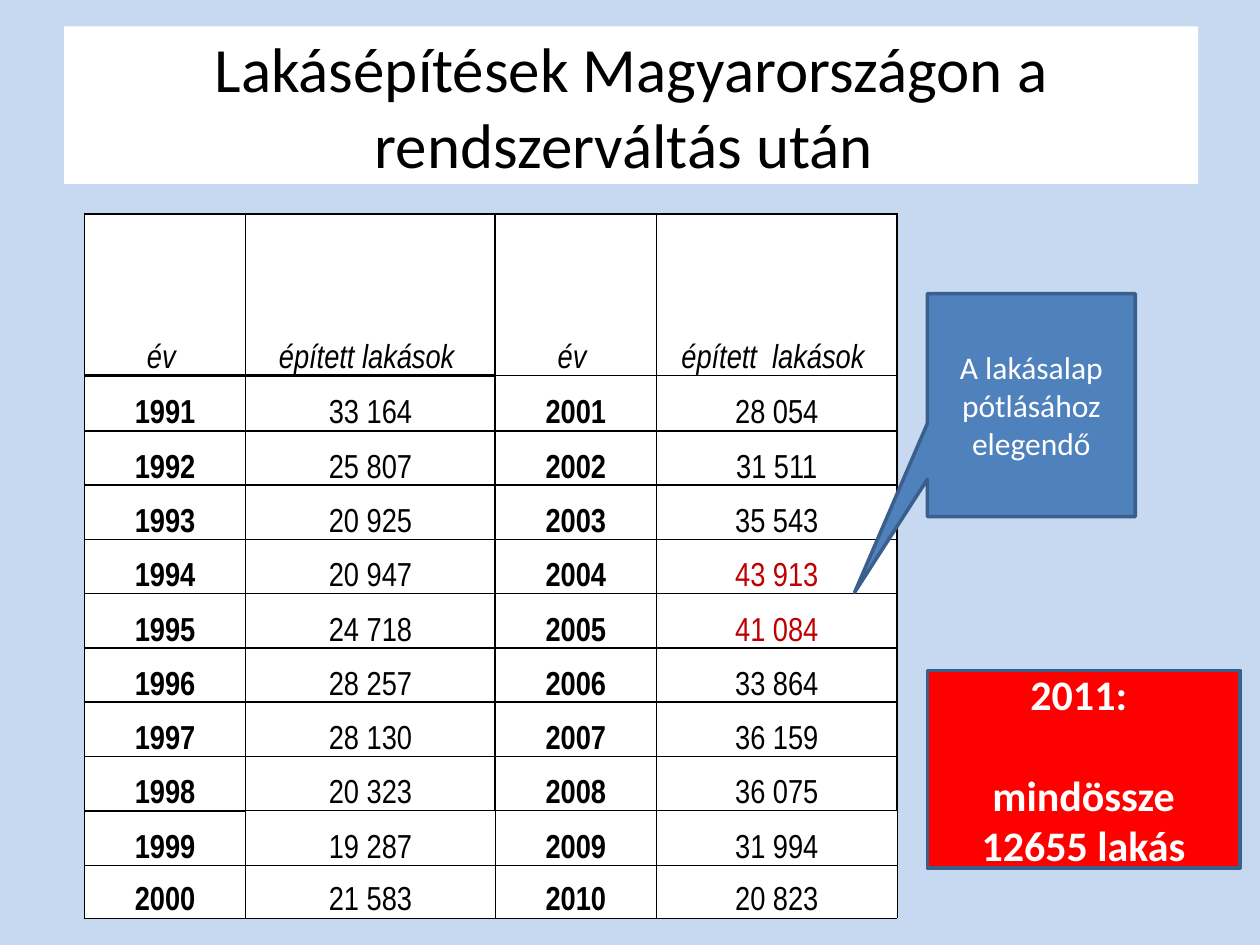
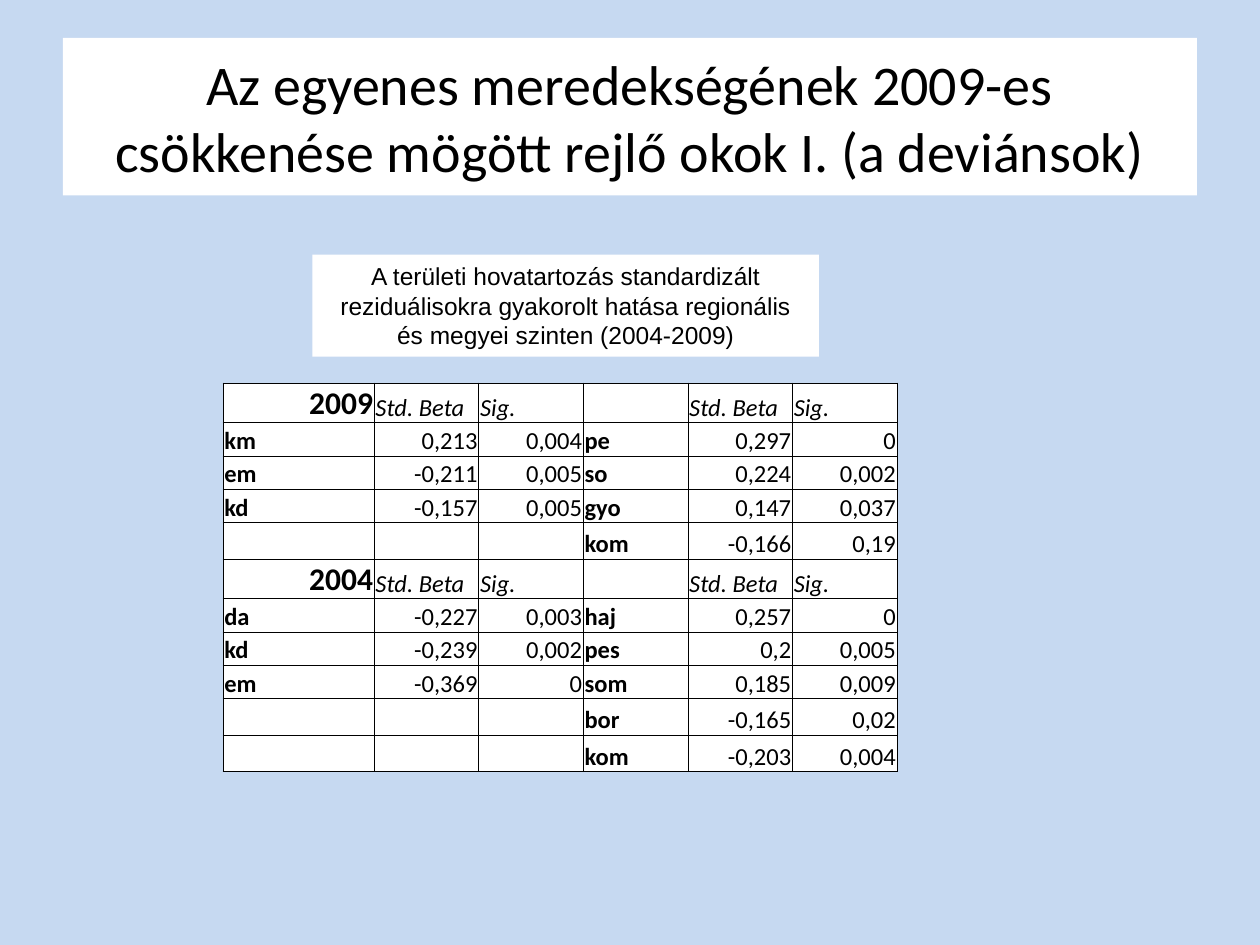
from collections import namedtuple

from lxml import etree
from pptx import Presentation
from pptx.dml.color import RGBColor
from pptx.enum.shapes import MSO_SHAPE
from pptx.enum.text import MSO_ANCHOR, PP_ALIGN
from pptx.oxml.ns import qn
from pptx.util import Inches, Pt

RECT, CALLOUT = MSO_SHAPE.RECTANGLE, MSO_SHAPE.RECTANGULAR_CALLOUT
LEFT, MID, RIGHT = PP_ALIGN.LEFT, PP_ALIGN.CENTER, PP_ALIGN.RIGHT
CENTER, LOW = MSO_ANCHOR.MIDDLE, MSO_ANCHOR.BOTTOM

WIDTH, HEIGHT = Inches(10), Inches(7.5)
COL, ROW = WIDTH / 100, HEIGHT / 75
HUES = {"sky": "C6D9F1", "white": "FFFFFF", "black": "000000", "blue": "4F81BD",
        "navy": "3A5F8C", "red": "FF0000", "wine": "C00000"}

BUILT = ["33 164", "25 807", "20 925", "20 947", "24 718",
         "28 257", "28 130", "20 323", "19 287", "21 583",
         "28 054", "31 511", "35 543", "43 913", "41 084",
         "33 864", "36 159", "36 075", "31 994", "20 823"]
PEAKS = ("43 913", "41 084")
HEADS = ["Std. Beta", "Sig."]
BETAS = [
    ["2009", *HEADS, "", *HEADS],
    ["km", "0,213", "0,004", "pe", "0,297", "0"],
    ["em", "-0,211", "0,005", "so", "0,224", "0,002"],
    ["kd", "-0,157", "0,005", "gyo", "0,147", "0,037"],
    ["", "", "", "kom", "-0,166", "0,19"],
    ["2004", *HEADS, "", *HEADS],
    ["da", "-0,227", "0,003", "haj", "0,257", "0"],
    ["kd", "-0,239", "0,002", "pes", "0,2", "0,005"],
    ["em", "-0,369", "0", "som", "0,185", "0,009"],
    ["", "", "", "bor", "-0,165", "0,02"],
    ["", "", "", "kom", "-0,203", "0,004"],
]


class Box(namedtuple("Box", "x y w h")):
    """A region counted in columns and rows of the page grid."""

    def inner(self, x, y, w, h):
        """Return a region placed from this one's corner."""
        return Box(self.x + x, self.y + y, w, h)

    def place(self):
        """Return left, top, width and height as lengths."""
        return [round(n * unit) for n, unit in zip(self, (COL, ROW, COL, ROW))]


def hue(name):
    """Return the named colour."""
    return RGBColor.from_string(HUES[name])


def write(frame, text, size=18, font="Calibri", color="black", bold=False,
          slant=False, align=MID, gap=0):
    """Fill a text frame with one paragraph a line."""
    frame.word_wrap = True
    for i, line in enumerate(text.split("\n")):
        para = frame.add_paragraph() if i else frame.paragraphs[0]
        para.alignment = align
        para.space_after = Pt(gap)
        run = para.add_run()
        run.text = line
        face = run.font
        face.size, face.name = Pt(size), font
        face.bold, face.italic = bold, slant
        face.color.rgb = hue(color)


def panel(slide, box, text, kind=RECT, fill="white", line=None, **form):
    """Add a filled shape with centred text."""
    shape = slide.shapes.add_shape(kind, *box.place())
    shape.shadow.inherit = False
    shape.fill.solid()
    shape.fill.fore_color.rgb = hue(fill)
    if line:
        shape.line.color.rgb = hue(line)
        shape.line.width = Pt(2)
    else:
        shape.line.fill.background()
    shape.text_frame.vertical_anchor = CENTER
    write(shape.text_frame, text, **form)
    return shape


def border(cell, edges):
    """Draw black cell edges of the given widths in points."""
    props = cell._tc.get_or_add_tcPr()
    for side in "LRTB":
        line = etree.SubElement(props, qn(f"a:ln{side}"), w=str(Pt(edges[side])))
        paint = etree.SubElement(line, qn("a:solidFill"))
        etree.SubElement(paint, qn("a:srgbClr"), val=HUES["black"])


def grid(slide, box, rows, wide, tall, look, edge):
    """Add a table; look and edge give each cell's format and lines."""
    frame = slide.shapes.add_table(len(rows), len(wide), *box.place())
    table = frame.table
    table.first_row = table.horz_banding = False
    for col, span in zip(table.columns, wide):
        col.width = round(span * COL)
    for line, span in zip(table.rows, tall):
        line.height = round(span * ROW)
    for r, row in enumerate(rows):
        for c, text in enumerate(row):
            cell = table.cell(r, c)
            cell.margin_left = cell.margin_right = cell.margin_top = Inches(0.01)
            cell.margin_bottom = 0
            cell.vertical_anchor = LOW
            border(cell, edge(r, c))
            cell.fill.solid()
            cell.fill.fore_color.rgb = hue("white")
            write(cell.text_frame, text, **look(r, c, text))


def homes(slide, box):
    """Place the table of homes built per year."""
    half = len(BUILT) // 2
    rows = [["év ", "épített lakások ", "év ", "épített  lakások "]]
    rows += [[str(1991 + i), BUILT[i], str(1991 + half + i), BUILT[half + i]]
             for i in range(half)]

    def look(r, c, text):
        """Slant the heads, embolden the years, redden the peaks."""
        return {"size": 19, "font": "Arial Narrow", "slant": r == 0,
                "bold": r > 0 and c % 2 == 0,
                "color": "wine" if text in PEAKS else "black"}

    def edge(r, c):
        """Thicken the left head line and thin the last two rows."""
        late = r > 8
        edges = dict.fromkeys("LRTB", 0.5 if late else 1)
        if late and c == 0:
            edges["L"] = 1
        if r == 9 and c == 0:
            edges["T"] = 1
        if r == 8 and c > 0:
            edges["B"] = 0.5
        if r < 2 and c < 2:
            edges["TB"[r == 0]] = 2
        return edges

    tall = [12.8, 4.4] + [4.31] * 8 + [4.2]
    grid(slide, box, rows, [12.8, 19.8, 12.8, 19.1], tall, look, edge)


def notes(slide, box):
    """Place the red note and the callout beside the table."""
    panel(slide, box.inner(0, 29.9, 24.8, 15.7), "2011: \nmindössze 12655 lakás",
          fill="red", line="navy", size=24, color="white", bold=True, gap=29)
    call = panel(slide, box.inner(0, 0, 16.5, 17.7), "A lakásalap pótlásához elegendő",
                 kind=CALLOUT, fill="blue", line="navy", color="white")
    call.adjustments[0], call.adjustments[1] = -0.85, 0.84


def betas(slide, box):
    """Place the table of regional effects."""
    heads = [r for r, row in enumerate(BETAS) if row[1] == HEADS[0]]

    def look(r, c, text):
        """Style years, heads, region names and values."""
        if r in heads:
            if c == 0:
                return {"size": 18, "bold": True, "align": RIGHT}
            return {"size": 14, "slant": True, "align": LEFT}
        name = c % 3 == 0
        return {"size": 14, "bold": name, "align": LEFT if name else RIGHT}

    def edge(r, c):
        """Keep every line thin."""
        return dict.fromkeys("LRTB", 0.5)

    tall = [3.1 if r in heads else 2.64 for r in range(len(BETAS))]
    grid(slide, box, BETAS, [12] + [8.3] * 5, tall, look, edge)


def sheet(deck, box, title, size):
    """Add a slide with its ground and title band."""
    slide = deck.slides.add_slide(deck.slide_layouts[6])
    ground = slide.background.fill
    ground.solid()
    ground.fore_color.rgb = hue("sky")
    panel(slide, box, title, size=size)
    return slide


def main():
    """Build both slides and save them."""
    deck = Presentation()
    deck.slide_width, deck.slide_height = WIDTH, HEIGHT

    slide = sheet(deck, Box(5.1, 2.1, 90, 12.5),
                  "Lakásépítések Magyarországon a rendszerváltás után ", 36)
    homes(slide, Box(6.7, 17, 64.5, 55.9))
    notes(slide, Box(73.6, 23.3, 24.8, 45.6))

    slide = sheet(deck, Box(5, 3, 90, 12.5),
                  "Az egyenes meredekségének 2009-es csökkenése mögött rejlő okok I. "
                  "(a deviánsok)", 32)
    panel(slide, Box(24.8, 20.2, 40.2, 8.1),
          "A területi hovatartozás standardizált reziduálisokra gyakorolt hatása "
          "regionális és megyei szinten (2004-2009)", size=14, font="Arial")
    betas(slide, Box(17.7, 30.4, 53.5, 30))
    deck.save("out.pptx")


if __name__ == "__main__":
    main()
